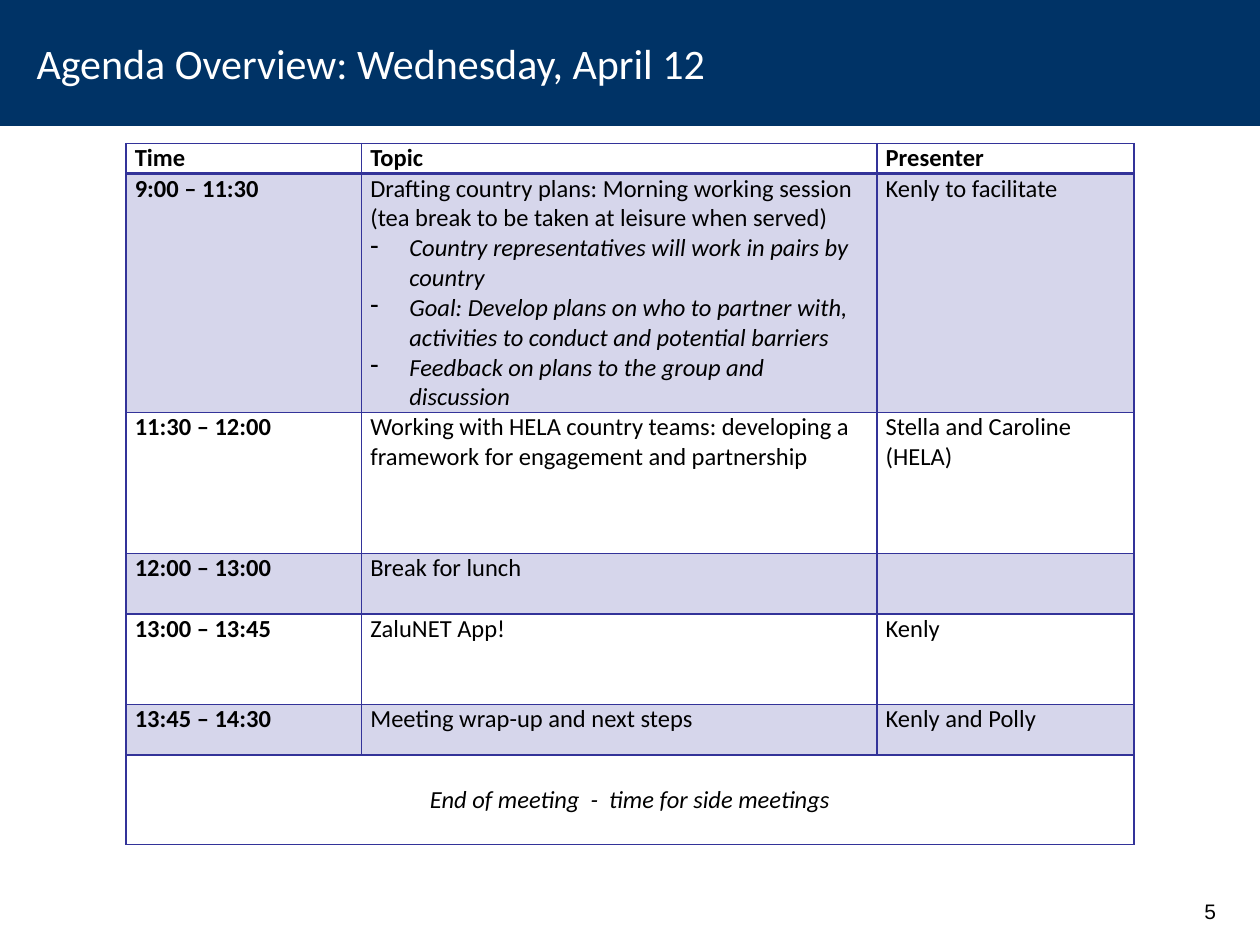
from lxml.etree import SubElement
from pptx import Presentation
from pptx.dml.color import RGBColor
from pptx.enum.shapes import MSO_SHAPE
from pptx.enum.text import MSO_ANCHOR, PP_ALIGN
from pptx.oxml.ns import qn
from pptx.util import Inches, Pt

NAVY = RGBColor(0x00, 0x33, 0x66)
INDIGO = RGBColor(0x33, 0x33, 0x99)
LAVENDER = RGBColor(0xD6, 0xD6, 0xEB)
WHITE = RGBColor(0xFF, 0xFF, 0xFF)
BLACK = RGBColor(0x00, 0x00, 0x00)

COLUMN_WIDTHS = [1.87, 4.09, 2.04]
ROW_HEIGHTS = [0.24, 1.89, 1.12, 0.48, 0.72, 0.4, 0.71]

# Each cell holds a paragraph, or a list whose later items are dashed points
AGENDA = [
    ["Time", "Topic", "Presenter"],
    ["9:00 – 11:30",
     ["Drafting country plans: Morning working session (tea break to be taken at leisure when served)",
      "Country representatives will work in pairs by country",
      "Goal: Develop plans on who to partner with, activities to conduct and potential barriers",
      "Feedback on plans to the group and discussion"],
     "Kenly to facilitate"],
    ["11:30 – 12:00",
     "Working with HELA country teams: developing a framework for engagement and partnership",
     "Stella and Caroline (HELA)"],
    ["12:00 – 13:00", "Break for lunch", ""],
    ["13:00 – 13:45", "ZaluNET App!", "Kenly"],
    ["13:45 – 14:30", "Meeting wrap-up and next steps", "Kenly and Polly"],
    ["End of meeting  -  time for side meetings", "", ""],
]


def write(paragraph, text, color=BLACK, **font_format):
    run = paragraph.add_run()
    run.text = text
    run.font.color.rgb = color
    for name, value in font_format.items():
        setattr(run.font, name, value)


def add_borders(cell, widths):
    properties = cell._tc.get_or_add_tcPr()
    for side, points in widths.items():
        line = SubElement(properties, qn(f"a:ln{side}"), w=str(Pt(points)))
        fill = SubElement(line, qn("a:solidFill"))
        SubElement(fill, qn("a:srgbClr"), val=str(INDIGO))


presentation = Presentation()
presentation.slide_width, presentation.slide_height = Inches(10), Inches(7.5)
width, height = presentation.slide_width, presentation.slide_height
slide = presentation.slides.add_slide(presentation.slide_layouts[6])

# Title band
band = slide.shapes.add_shape(MSO_SHAPE.RECTANGLE, 0, 0, width, Inches(1))
band.shadow.inherit = False
band.fill.solid()
band.fill.fore_color.rgb = NAVY
band.line.fill.background()
band.text_frame.margin_left = Inches(0.29)
band.text_frame.vertical_anchor = MSO_ANCHOR.MIDDLE
title = band.text_frame.paragraphs[0]
title.alignment = PP_ALIGN.LEFT
write(title, "Agenda Overview: Wednesday, April 12", WHITE, name="Calibri", size=Pt(24))

# Agenda table
last_row = len(AGENDA) - 1
table = slide.shapes.add_table(
    len(AGENDA), len(COLUMN_WIDTHS), int(width * 0.1), Inches(1.14),
    int(width * 0.8), Inches(sum(ROW_HEIGHTS))).table
table.first_row = table.horz_banding = False
for column, inches in zip(table.columns, COLUMN_WIDTHS):
    column.width = Inches(inches)
for row, inches in zip(table.rows, ROW_HEIGHTS):
    row.height = Inches(inches)
table.cell(last_row, 0).merge(table.cell(last_row, 2))

cell_format = {"margin_left": Inches(0.07), "margin_right": Inches(0.07),
               "margin_top": 0, "margin_bottom": 0}
for row_index, entries in enumerate(AGENDA):
    for column_index, entry in enumerate(entries):
        cell = table.cell(row_index, column_index)
        for name, value in cell_format.items():
            setattr(cell, name, value)
        add_borders(cell, {"L": 1, "R": 1, "T": 2 if row_index == 1 else 1,
                           "B": 2 if row_index == 0 else 1})
        cell.fill.solid()
        cell.fill.fore_color.rgb = LAVENDER if row_index % 2 else WHITE
        if not entry:
            continue

        closing = row_index == last_row
        bold = row_index == 0 or (column_index == 0 and not closing)
        lines = entry if isinstance(entry, list) else [entry]
        for line_index, line in enumerate(lines):
            frame = cell.text_frame
            paragraph = frame.add_paragraph() if line_index else frame.paragraphs[0]
            if line_index:
                properties = paragraph._p.get_or_add_pPr()
                properties.set("marL", str(Inches(0.31)))
                properties.set("indent", str(-Inches(0.31)))
                SubElement(properties, qn("a:buChar"), char="-")
            write(paragraph, line, name="Calibri", size=Pt(14), bold=bold,
                  italic=closing or line_index > 0)

# Closing row
closing_cell = table.cell(last_row, 0)
closing_cell.vertical_anchor = MSO_ANCHOR.MIDDLE
closing_cell.text_frame.paragraphs[0].alignment = PP_ALIGN.CENTER

# Page number
number_box = slide.shapes.add_textbox(
    Inches(7.67), Inches(7.08), Inches(2.08), height - Inches(7.08))
number_box.text_frame.word_wrap = True
number = number_box.text_frame.paragraphs[0]
number.alignment = PP_ALIGN.RIGHT
write(number, "5", name="Arial", size=Pt(12))

presentation.save("out.pptx")
